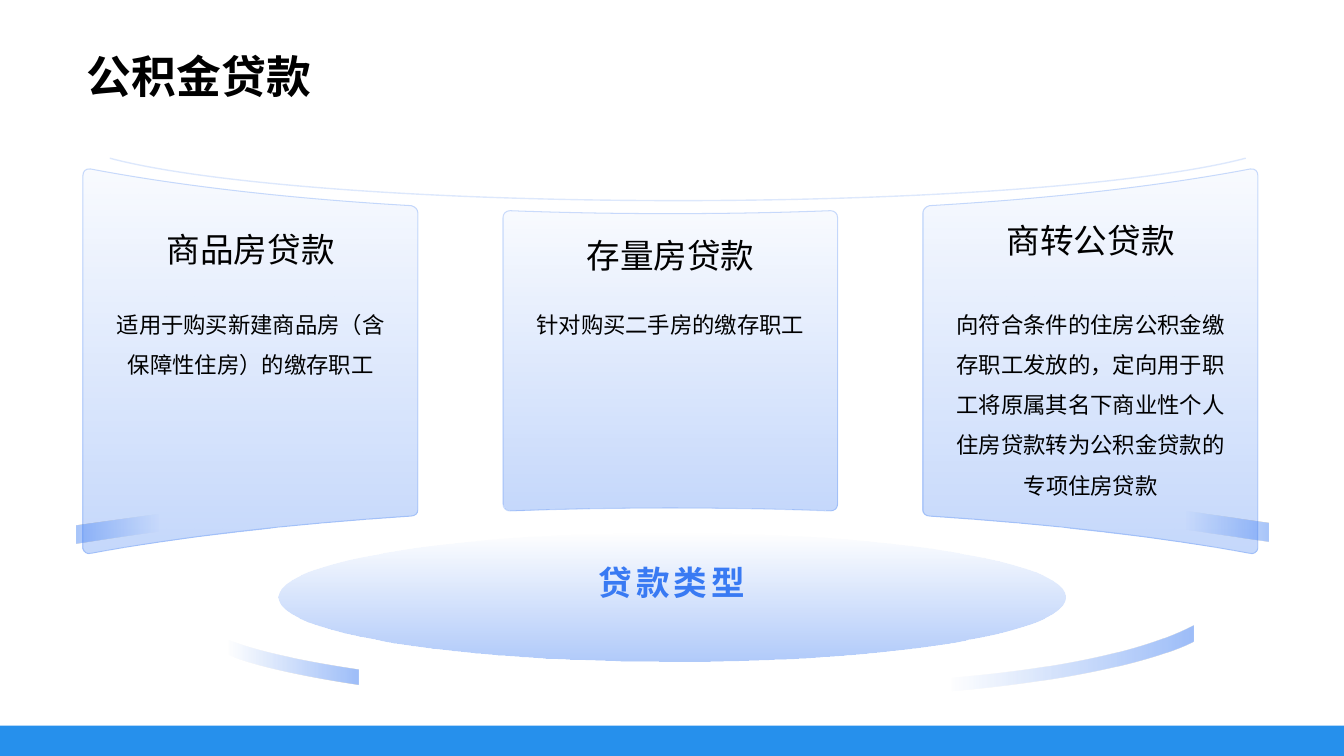
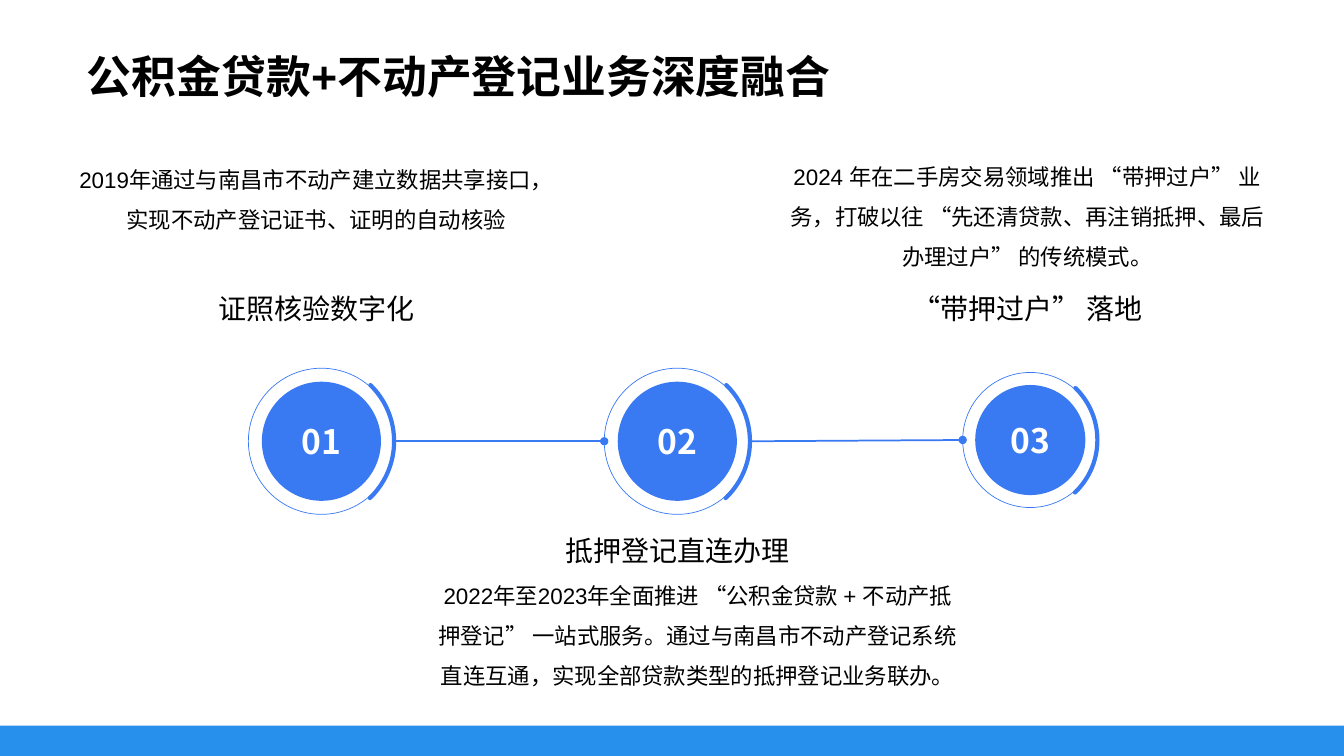
import pptx
import pptx.dml.color
import pptx.enum.lang
import pptx.enum.shapes
import pptx.enum.text
import pptx.oxml
import pptx.oxml.ns
import pptx.util

Pt = pptx.util.Pt
RGBColor = pptx.dml.color.RGBColor
Shape = pptx.enum.shapes.MSO_SHAPE
Align = pptx.enum.text.PP_ALIGN
Anchor = pptx.enum.text.MSO_ANCHOR
qn = pptx.oxml.ns.qn

BAND_BLUE = RGBColor(0x26, 0x90, 0xEC)
ACCENT = RGBColor(0x39, 0x7A, 0xF3)
BLACK = RGBColor(0, 0, 0)
WHITE = RGBColor(255, 255, 255)
LATIN_FONT = "Arial"
CJK_FONT = "Noto Sans CJK SC"
WIDTH, HEIGHT = 960, 540
CARD_WIDTH = 203
DETAIL_SPACING = Pt(28.75)

SIDE_CARD = [
    (298.5, 152), (298.5, 364.3),
    (298.5, 366.5, 296.6, 368.6, 293.8, 368.6),
    (205.2, 374.4, 126.7, 383.8, 64.8, 395.3),
    (62.6, 396, 59.8, 394.6, 59.3, 391.7), (59.3, 125.3),
    (59.3, 122.4, 61.2, 120.2, 64.8, 120.7),
    (126.7, 132.5, 205.2, 141.8, 293.8, 146.9),
    (296.6, 147.6, 298.5, 149.8, 298.5, 152),
]
MIDDLE_CARD = [
    (598.3, 155.5), (598.3, 360),
    (598.3, 362.9, 596.2, 365, 593.3, 365),
    (556.6, 363.6, 518, 362.9, 478.8, 362.9),
    (440, 362.9, 401, 363.6, 364.3, 365),
    (361.4, 365, 359.3, 362.9, 359.3, 360), (359.3, 155.5),
    (359.3, 152.6, 361.4, 150.5, 364.3, 150.5),
    (401, 151.9, 439.2, 152.6, 478.8, 152.6),
    (518.4, 152.6, 556.6, 151.9, 593.3, 150.5),
    (596.2, 150.5, 598.3, 152.6, 598.3, 155.5),
]
TOP_ARC = [
    (889.9, 113), (821.5, 131, 665.3, 143.3, 484.6, 143.3),
    (303.1, 143.3, 146.9, 131, 79.2, 113.2), (78.5, 113),
]
LEFT_SWOOSH = [
    (256.3, 478.1), (256.3, 488.9),
    (256.3, 488.9, 162.7, 475.9, 150.5, 460.1), (151.2, 450),
    (151.2, 450, 158.4, 463.7, 256.3, 478.1),
]
RIGHT_SWOOSH = [
    (852.5, 447.1), (852.5, 458.6),
    (852.5, 458.6, 807.1, 484.6, 655.9, 495.4), (655.2, 485.3),
    (655.2, 485.3, 787.7, 480.2, 852.5, 447.1),
]
LEFT_RIBBON = [
    (54.5, 375), (54.5, 388), (54.5, 388, 109.4, 379.4, 121.7, 378.7),
    (121.7, 365.8),
]
RIGHT_RIBBON = [
    (905.8, 373.7), (905.8, 386.6), (905.8, 386.6, 851, 378.7, 838.8, 377.3),
    (838.8, 364.3),
]

CARDS = [
    (77.6, 178.6, "商品房贷款", "适用于购买新建商品房（含保障性住房）的缴存职工"),
    (377.4, 183, "存量房贷款", "针对购买二手房的缴存职工"),
    (677.6, 172.6, "商转公贷款", "向符合条件的住房公积金缴存职工发放的，定向用于职工将原属其名下"
     "商业性个人住房贷款转为公积金贷款的专项住房贷款"),
]
STAGES = [
    ("01", 229.6, 315.2, 104.4),
    ("02", 483.8, 315.2, 104.4),
    ("03", 735.9, 314.3, 96.5),
]
STAGE_TEXTS = [
    ((55.4, 205.2, 341.3, 30), "证照核验数字化", (55.4, 108.9, 341.3, 60),
     "2019年通过与南昌市不动产建立数据共享接口，实现不动产登记证书、证明的自动核验"),
    ((344.2, 378, 280, 30), "抵押登记直连办理", (309.8, 406.1, 377.3, 90),
     "2022年至2023年全面推进 “公积金贷款 + 不动产抵押登记” 一站式服务。"
     "通过与南昌市不动产登记系统直连互通，实现全部贷款类型的抵押登记业务联办。"),
    ((563.3, 205.2, 341.3, 30), "“带押过户” 落地", (563.3, 106.8, 341.3, 90),
     "2024 年在二手房交易领域推出 “带押过户” 业务，打破以往 “先还清贷款、"
     "再注销抵押、最后办理过户” 的传统模式。"),
]


def write(frame, text, size=16, color=BLACK, bold=False, align=Align.CENTER,
          anchor=Anchor.MIDDLE, font=LATIN_FONT, line_spacing=None,
          tracking=None, wrap=True, inset=0):
    frame.word_wrap = wrap
    frame.auto_size = pptx.enum.text.MSO_AUTO_SIZE.NONE
    frame.vertical_anchor = anchor
    if inset is not None:
        frame.margin_left = frame.margin_right = Pt(inset)
        frame.margin_top = frame.margin_bottom = Pt(inset)
    para = frame.paragraphs[0]
    para.alignment = align
    if line_spacing:
        para.line_spacing = line_spacing
    span = para.add_run()
    span.text = text
    span.font.name = font
    span.font.size = Pt(size)
    span.font.bold = bold
    span.font.color.rgb = color
    span.font.language_id = pptx.enum.lang.MSO_LANGUAGE_ID.SIMPLIFIED_CHINESE
    properties = span._r.get_or_add_rPr()
    if tracking:
        properties.set("spc", str(tracking * 100))
    east_asian = pptx.oxml.parse_xml(
        f'<a:ea {pptx.oxml.ns.nsdecls("a")} typeface="{CJK_FONT}"/>')
    properties.find(qn("a:latin")).addnext(east_asian)


def add_text(page, bounds, text, **style):
    box = page.shapes.add_textbox(*map(Pt, bounds))
    write(box.text_frame, text, **style)


def set_opacity(node, percents):
    for color, percent in zip(node.iter(qn("a:srgbClr")), percents):
        alpha = color.makeelement(qn("a:alpha"), {"val": str(percent * 1000)})
        color.append(alpha)


def paint(shape, fill=None, line=None, weight=1, line_opacity=None):
    shape.shadow.inherit = False
    if fill is None:
        shape.fill.background()
    else:
        shape.fill.solid()
        shape.fill.fore_color.rgb = fill
    if line is None:
        shape.line.fill.background()
    else:
        shape.line.color.rgb = line
        shape.line.width = Pt(weight)
        if line_opacity:
            set_opacity(shape.line._get_or_add_ln(), [line_opacity])


def fade(shape, opacities, positions=(0, 1), angle=0):
    shape.fill.gradient()
    shape.fill.gradient_angle = angle
    for stop, position in zip(shape.fill.gradient_stops, positions):
        stop.position = position
        stop.color.rgb = ACCENT
    set_opacity(shape.element.spPr.find(qn("a:gradFill")), opacities)


def add_preset(page, kind, bounds, **look):
    shape = page.shapes.add_shape(kind, *map(Pt, bounds))
    paint(shape, **look)
    return shape


def circle_bounds(x, y, diameter):
    return x - diameter / 2, y - diameter / 2, diameter, diameter


def mirror(outline, width):
    return [tuple(width - value if index % 2 == 0 else value
                  for index, value in enumerate(segment))
            for segment in outline]


def bend(shape, segments):
    edges = list(shape.element.iter(qn("a:lnTo")))
    for edge, segment in zip(edges, segments):
        if len(segment) == 2:
            continue
        curve = edge.makeelement(qn("a:cubicBezTo"), {})
        for x, y in zip(segment[::2], segment[1::2]):
            curve.append(edge.makeelement(qn("a:pt"), {
                "x": str(Pt(x) - shape.left), "y": str(Pt(y) - shape.top)}))
        edge.getparent().replace(edge, curve)


def add_outline(page, outline, close=True, **look):
    corners = [(Pt(segment[-2]), Pt(segment[-1])) for segment in outline]
    if not close:
        corners[1] = (corners[1][0], Pt(outline[1][-1]))
    builder = page.shapes.build_freeform(*corners[0])
    builder.add_line_segments(corners[1:], close=close)
    shape = builder.convert_to_shape()
    bend(shape, outline[1:])
    paint(shape, **look)
    return shape


def add_card(page, outline):
    card = add_outline(page, outline, line=ACCENT, weight=0.75, line_opacity=25)
    fade(card, (3, 30), angle=270)


def add_stage(page, number, x, y, diameter):
    add_preset(page, Shape.OVAL, circle_bounds(x, y, diameter),
               line=ACCENT, weight=0.5)
    disc = add_preset(page, Shape.OVAL, circle_bounds(x, y, diameter * 0.815),
                      fill=ACCENT)
    write(disc.text_frame, number, size=24, color=WHITE, bold=True,
          font=CJK_FONT, wrap=False)
    arc = add_preset(page, Shape.ARC,
                     circle_bounds(x - diameter * 0.04, y, diameter * 1.075),
                     line=ACCENT, weight=3)
    arc.rotation = 270
    arc.adjustments[0] = 26.57
    arc.adjustments[1] = 81.76
    arc.line._get_or_add_ln().set("cap", "rnd")


def add_link(page, start, end):
    link = page.shapes.add_connector(
        pptx.enum.shapes.MSO_CONNECTOR.STRAIGHT, *map(Pt, start + end))
    link.line.color.rgb = ACCENT
    link.line.width = Pt(1.25)
    line = link.line._get_or_add_ln()
    line.append(line.makeelement(qn("a:tailEnd"), {"type": "oval"}))
    properties = link.element.spPr
    properties.append(properties.makeelement(qn("a:effectLst"), {}))


def add_page(deck, title):
    page = deck.slides.add_slide(deck.slide_layouts[5])
    holder = page.shapes.title
    holder.left, holder.top, holder.width, holder.height = map(
        Pt, (54.9, 28, 850.3, 57))
    write(holder.text_frame, title, size=32, bold=True, align=Align.LEFT,
          line_spacing=0.9, inset=None)
    return page


def add_layout_band(deck, page):
    band = add_preset(page, Shape.RECTANGLE, (0, 518.4, WIDTH, 21.6),
                      fill=BAND_BLUE)
    deck.slide_layouts[5].element.cSld.spTree.append(band.element)


def build_loan_types(page):
    platform = add_preset(page, Shape.OVAL, (198.7, 380.2, 562.3, 92.2))
    fade(platform, (0, 40), angle=270)
    add_text(page, (247.7, 384, 464.4, 63), "贷款类型", size=24, color=ACCENT,
             bold=True, tracking=3)
    for swoosh in (LEFT_SWOOSH, RIGHT_SWOOSH):
        fade(add_outline(page, swoosh), (0, 49), (0.12, 1))
    for outline in (SIDE_CARD, MIDDLE_CARD, mirror(SIDE_CARD, 957.8)):
        add_card(page, outline)
    add_outline(page, TOP_ARC, close=False, line=ACCENT, line_opacity=16)
    fade(add_outline(page, RIGHT_RIBBON), (0, 44), (0.12, 1))
    fade(add_outline(page, LEFT_RIBBON), (44, 0), (0, 0.88))
    for left, middle, heading, detail in CARDS:
        add_text(page, (left, middle - 16, CARD_WIDTH, 30), heading, size=24)
        add_text(page, (left, 212.5, CARD_WIDTH, 148), detail,
                 anchor=Anchor.TOP, line_spacing=DETAIL_SPACING)


def build_integration(page):
    for stage in STAGES:
        add_stage(page, *stage)
    for (_, x, y, size), (_, next_x, next_y, next_size) in zip(STAGES, STAGES[1:]):
        add_link(page, (x + size * 0.51, y), (next_x - next_size / 2, next_y))
    for heading_bounds, heading, detail_bounds, detail in STAGE_TEXTS:
        add_text(page, heading_bounds, heading, size=20)
        add_text(page, detail_bounds, detail, anchor=Anchor.TOP,
                 line_spacing=DETAIL_SPACING)


def main():
    deck = pptx.Presentation()
    deck.slide_width, deck.slide_height = Pt(WIDTH), Pt(HEIGHT)
    loan_page = add_page(deck, "公积金贷款")
    add_layout_band(deck, loan_page)
    build_loan_types(loan_page)
    build_integration(add_page(deck, "公积金贷款+不动产登记业务深度融合"))
    deck.save("out.pptx")


if __name__ == "__main__":
    main()
